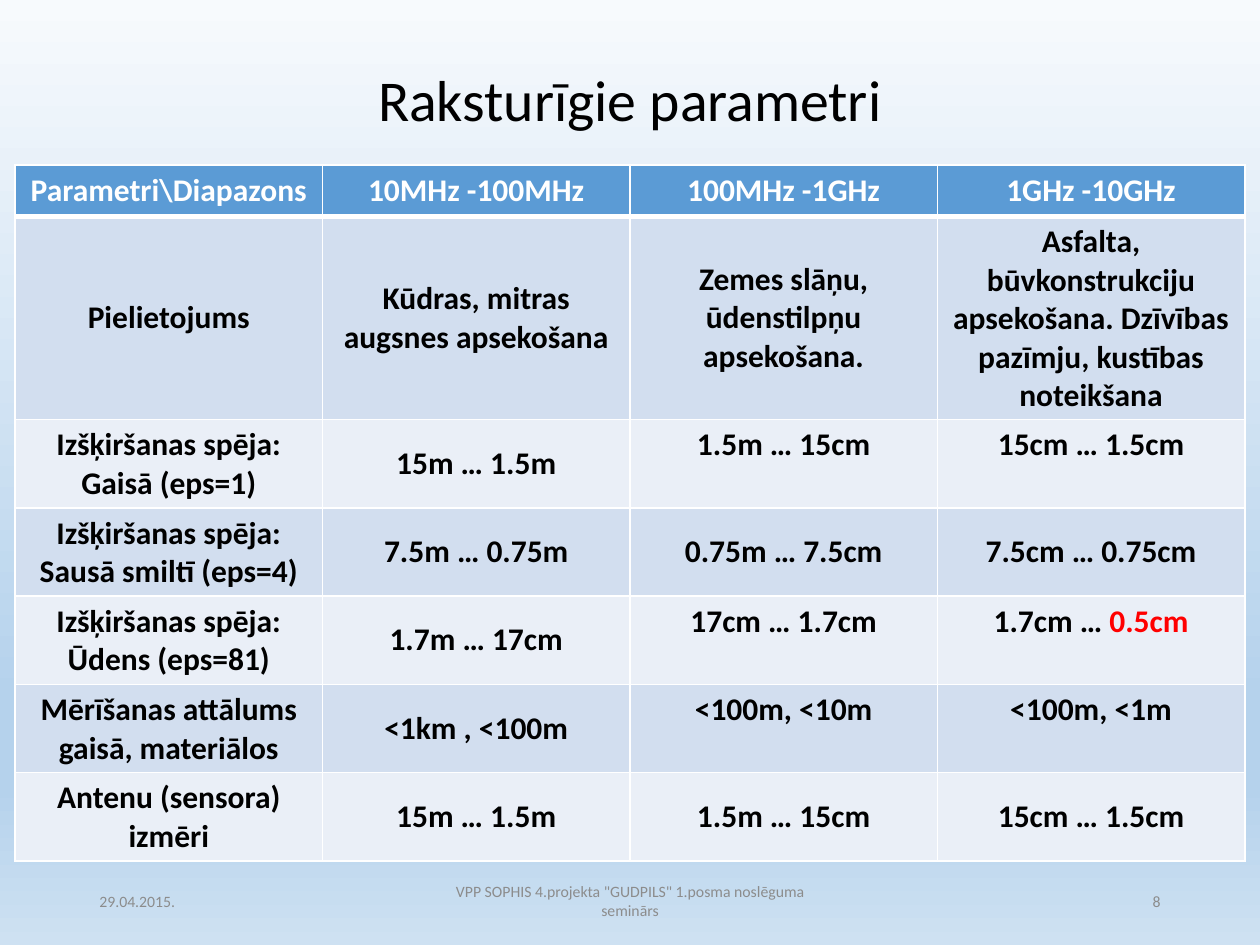
import pptx
import pptx.dml.color
import pptx.enum.text
import pptx.oxml
import pptx.oxml.ns
import pptx.util
from pptx.util import Inches

HUES = {
    "black": "000000", "white": "FFFFFF", "grey": "8C8C8C", "red": "FF0000",
    "head": "5B9BD5", "dark": "D2DEEF", "light": "EAEFF7",
}
STOPS = [(0, "F7FAFD"), (74, "B5D2EC"), (83, "B5D2EC"), (100, "CEE1F2")]
ALIGN = pptx.enum.text.PP_ALIGN
ANCHOR = pptx.enum.text.MSO_ANCHOR

ROWS = [
    ["Parametri\\Diapazons", "10MHz -100MHz", "100MHz -1GHz", "1GHz -10GHz"],
    ["Pielietojums", "Kūdras, mitras augsnes apsekošana",
     "Zemes slāņu, ūdenstilpņu apsekošana.",
     "Asfalta, būvkonstrukciju apsekošana. Dzīvības pazīmju, kustības noteikšana"],
    ["Izšķiršanas spēja:\nGaisā (eps=1)", "15m … 1.5m", "1.5m … 15cm", "15cm … 1.5cm"],
    ["Izšķiršanas spēja:\nSausā smiltī (eps=4)", "7.5m … 0.75m", "0.75m … 7.5cm",
     "7.5cm … 0.75cm"],
    ["Izšķiršanas spēja:\nŪdens (eps=81)", "1.7m … 17cm", "17cm … 1.7cm", "1.7cm … "],
    ["Mērīšanas attālums\ngaisā, materiālos", "<1km , <100m", "<100m, <10m", "<100m, <1m"],
    ["Antenu (sensora) izmēri", "15m … 1.5m", "1.5m … 15cm", "15cm … 1.5cm"],
]
HIGHS = [0.41, 1.61, 0.7, 0.7, 0.7, 0.7, 0.41]
TOP_ROWS = {2, 4, 5}  # their last two cells sit at the top


def style(run, size, hue, bold=False):
    font = run.font
    font.name = "Calibri"
    font.size = pptx.util.Pt(size)
    font.bold = bold
    font.color.rgb = pptx.dml.color.RGBColor.from_string(HUES[hue])


def format_text(frame, size, hue, align, bold=False):
    for para in frame.paragraphs:
        para.alignment = align
        for run in para.runs:
            style(run, size, hue, bold)


def add_ground(slide):
    fill = slide.background.fill
    fill.gradient()
    fill.gradient_angle = 270
    stops = slide.element.find(".//" + pptx.oxml.ns.qn("a:gsLst"))
    for old in list(stops):
        stops.remove(old)
    for pos, hue in STOPS:
        stops.append(pptx.oxml.parse_xml(
            f'<a:gs {pptx.oxml.ns.nsdecls("a")} pos="{pos * 1000}">'
            f'<a:srgbClr val="{hue}"/></a:gs>'))


def add_title(slide, left, top, width, height):
    title = slide.shapes.title
    title.left, title.top, title.width, title.height = map(
        Inches, (left, top, width, height))
    frame = title.text_frame
    frame.text = "Raksturīgie parametri"
    frame.vertical_anchor = ANCHOR.MIDDLE
    frame.paragraphs[0].line_spacing = 0.9
    format_text(frame, 33, "black", ALIGN.CENTER)


def add_edges(cell, base):
    """Draw white cell borders, with the bottom one base points wide."""
    props = cell._tc.get_or_add_tcPr()
    for side, wide in zip("LRTB", (1, 1, 1, base)):
        props.append(pptx.oxml.parse_xml(
            f'<a:ln{side} {pptx.oxml.ns.nsdecls("a")} w="{pptx.util.Pt(wide)}">'
            f'<a:solidFill><a:srgbClr val="{HUES["white"]}"/></a:solidFill>'
            f'</a:ln{side}>'))


def add_grid(slide, left, top, width):
    table = slide.shapes.add_table(
        len(ROWS), len(ROWS[0]), Inches(left), Inches(top),
        Inches(width), Inches(sum(HIGHS))).table
    for col in table.columns:
        col.width = Inches(width / len(ROWS[0]))
    for r, (texts, high) in enumerate(zip(ROWS, HIGHS)):
        table.rows[r].height = Inches(high)
        band = "head" if r == 0 else "dark" if r % 2 else "light"
        for c, text in enumerate(texts):
            cell = table.cell(r, c)
            add_edges(cell, 1 if r else 3)
            cell.fill.solid()
            cell.fill.fore_color.rgb = pptx.dml.color.RGBColor.from_string(HUES[band])
            raised = r in TOP_ROWS and c > 1
            cell.vertical_anchor = ANCHOR.TOP if raised else ANCHOR.MIDDLE
            cell.text_frame.text = text
            format_text(cell.text_frame, 18, "black" if r else "white",
                        ALIGN.CENTER, True)
    limit = table.cell(4, 3).text_frame.paragraphs[0].add_run()
    limit.text = "0.5cm"
    style(limit, 18, "red", True)


def add_footer(slide, top, height):
    parts = [
        (0.69, 2.25, "29.04.2015.", ALIGN.LEFT),
        (3.31, 3.38, 'VPP SOPHIS 4.projekta "GUDPILS" 1.posma noslēguma seminārs',
         ALIGN.CENTER),
        (7.06, 2.25, "8", ALIGN.RIGHT),
    ]
    for left, width, text, align in parts:
        frame = slide.shapes.add_textbox(
            Inches(left), Inches(top), Inches(width), Inches(height)).text_frame
        frame.word_wrap = True
        frame.vertical_anchor = ANCHOR.MIDDLE
        frame.text = text
        format_text(frame, 9, "grey", align)


def main():
    deck = pptx.Presentation()
    deck.slide_width, deck.slide_height = Inches(10), Inches(7.5)
    slide = deck.slides.add_slide(deck.slide_layouts[5])
    add_ground(slide)
    add_title(slide, 0.69, 0.4, 8.62, 0.83)
    add_footer(slide, 6.95, 0.4)
    add_grid(slide, 0.12, 1.31, 9.76)
    deck.save("out.pptx")


if __name__ == "__main__":
    main()
